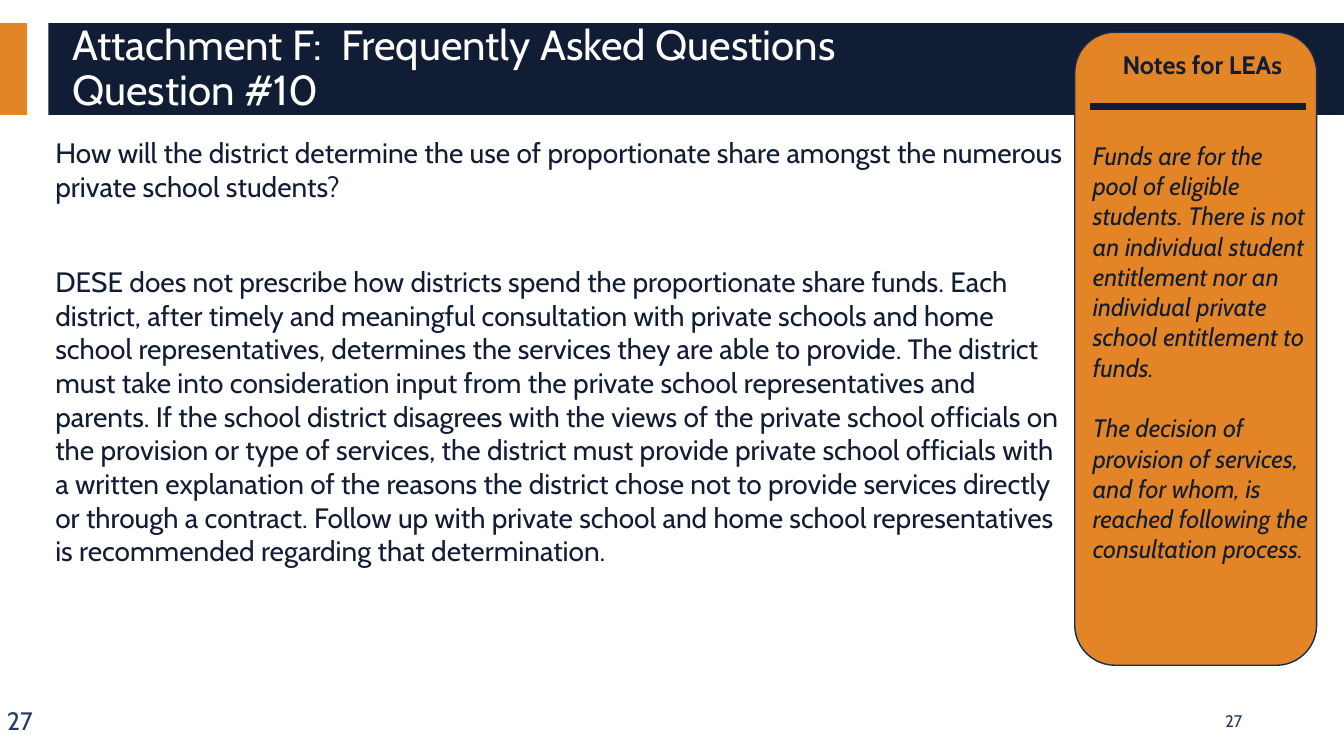
from lxml import etree
from pptx import Presentation
from pptx import util as u
from pptx.dml.color import RGBColor
from pptx.enum import shapes, text
from pptx.oxml import ns

WIDTH, HEIGHT = u.Inches(13.33), u.Inches(7.5)
NAVY = RGBColor(0x10, 0x1D, 0x35)
OUTLINE = RGBColor(0x18, 0x2C, 0x4E)
BLUE = RGBColor(0x20, 0x3B, 0x6A)
ORANGE = RGBColor(0xE3, 0x85, 0x26)
WHITE = RGBColor(0xFF, 0xFF, 0xFF)

FONT = "Cabin"
BAND_TOP, BAND_HEIGHT = 3.07, 12.13
FOOT_TOP, FOOT_HEIGHT = 92.67, 5.33
PAGE_NUMBER = "27"

TITLE = "Attachment F:  Frequently Asked Questions\vQuestion #10"
QUESTION = ("How will the district determine the use of proportionate share "
            "amongst the numerous private school students?")
ANSWER = (
    "DESE does not prescribe how districts spend the proportionate share funds. "
    "Each district, after timely and meaningful consultation with private schools "
    "and home school representatives, determines the services they are able to "
    "provide. The district must take into consideration input from the private "
    "school representatives and parents. If the school district disagrees with the "
    "views of the private school officials on the provision or type of services, "
    "the district must provide private school officials with a written explanation "
    "of the reasons the district chose not to provide services directly or through "
    "a contract. Follow up with private school and home school representatives is "
    "recommended regarding that determination.")
NOTES_HEADING = "Notes for LEAs"
NOTES = [
    "Funds are for the pool of eligible students. There is not an individual "
    "student entitlement nor an individual private school entitlement to funds.",
    "The decision of provision of services, and for whom, is reached following "
    "the consultation process.",
]


def across(percent):
    return round(WIDTH * percent / 100)


def down(percent):
    return round(HEIGHT * percent / 100)


def place(left, top, width, height):
    """Turn percentages of the slide into lengths."""
    return across(left), down(top), across(width), down(height)


def apply(target, values):
    for name, value in values.items():
        setattr(target, name, value)


def add_block(parent, kind, area, fill, line=None):
    block = parent.add_shape(kind, *place(*area))
    block.shadow.inherit = False
    block.fill.solid()
    block.fill.fore_color.rgb = fill
    if line is None:
        block.line.fill.background()
    else:
        block.line.color.rgb = line
        block.line.width = u.Pt(1)


def add_rule(parent, left, right, top, color, weight):
    rule = parent.add_connector(shapes.MSO_CONNECTOR.STRAIGHT,
                                across(left), down(top), across(right), down(top))
    rule.line.color.rgb = color
    rule.line.width = u.Pt(weight)
    etree.SubElement(rule.element.spPr, ns.qn("a:effectLst"))


def add_text(parent, area, paragraphs, size, color,
             anchor=text.MSO_ANCHOR.TOP):
    """Each paragraph is (words, paragraph format, font format)."""
    box = parent.add_textbox(*place(*area))
    frame = box.text_frame
    apply(frame, {"word_wrap": True, "vertical_anchor": anchor})
    for index, (words, layout, font) in enumerate(paragraphs):
        para = frame.add_paragraph() if index else frame.paragraphs[0]
        para.text = words
        apply(para, layout)
        for span in para.runs:
            apply(span.font, {"name": FONT, "size": u.Pt(size), **font})
            span.font.color.rgb = color


def add_notes_card(page):
    card = page.shapes.add_group_shape().shapes
    add_block(card, shapes.MSO_SHAPE.ROUNDED_RECTANGLE,
              (79.97, 4.27, 18, 83.73), ORANGE, OUTLINE)
    heading = (NOTES_HEADING, {"alignment": text.PP_ALIGN.CENTER}, {"bold": True})
    notes = [(words, {"space_before": u.Pt(gap)}, {"italic": True})
             for words, gap in zip(NOTES, (43.4, 21.7))]
    add_text(card, (80.57, 5.87, 17.78, 82.13), [heading, *notes], 18, NAVY)
    add_rule(card, 81.1, 97.15, 14.13, NAVY, 5.25)


def main():
    deck = Presentation()
    apply(deck, {"slide_width": WIDTH, "slide_height": HEIGHT})
    page = deck.slides.add_slide(deck.slide_layouts[6])

    # Title band with its accent
    for left, width, fill in ((0, 2.03, ORANGE), (3.6, 96.4, NAVY)):
        add_block(page.shapes, shapes.MSO_SHAPE.RECTANGLE,
                  (left, BAND_TOP, width, BAND_HEIGHT), fill)

    # Page numbers
    add_text(page.shapes, (-0.23, FOOT_TOP, 3.83, FOOT_HEIGHT),
             [(PAGE_NUMBER, {}, {})], 18, BLUE)
    add_text(page.shapes, (70.67, FOOT_TOP, 22.5, FOOT_HEIGHT),
             [(PAGE_NUMBER, {"alignment": text.PP_ALIGN.RIGHT}, {})],
             12, BLUE, text.MSO_ANCHOR.MIDDLE)

    # Side notes
    add_notes_card(page)

    # Question and answer
    add_text(page.shapes, (3.38, 17.33, 76.52, 74.27),
             [(QUESTION, {}, {}), (ANSWER, {"space_before": u.Pt(44)}, {})],
             20, NAVY)

    # Title
    add_text(page.shapes, (4.65, 4.27, 93.32, 9.87),
             [(TITLE, {"line_spacing": 0.9}, {})],
             30, WHITE, text.MSO_ANCHOR.MIDDLE)

    deck.save("out.pptx")


if __name__ == "__main__":
    main()
